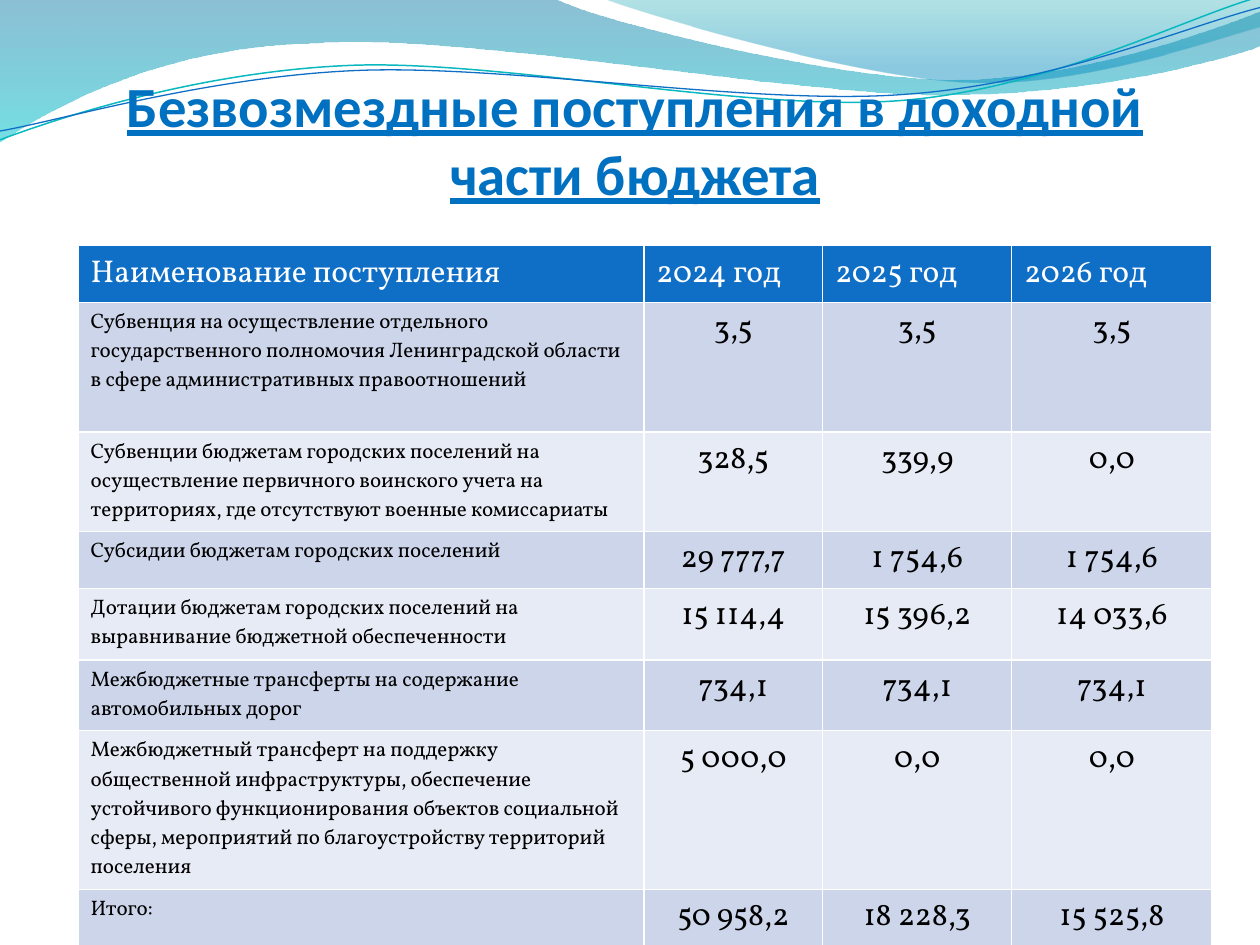
import pptx
import pptx.util
import pptx.dml.color
import pptx.enum.text
import pptx.oxml
import pptx.oxml.ns
import lxml.etree

Inches = pptx.util.Inches
Pt = pptx.util.Pt
qn = pptx.oxml.ns.qn
ALIGN = pptx.enum.text.PP_ALIGN
ANCHOR = pptx.enum.text.MSO_ANCHOR

TITLE = "Безвозмездные поступления в доходной части бюджета"
HEADER = ("Наименование поступления", "2024 год", "2025 год", "2026 год")
ROWS = [
    ("Субвенция на осуществление отдельного государственного полномочия "
     "Ленинградской области в сфере административных правоотношений", "3,5", "3,5", "3,5"),
    ("Субвенции бюджетам городских поселений на осуществление первичного воинского учета "
     "на территориях, где отсутствуют военные комиссариаты", "328,5", "339,9", "0,0"),
    ("Субсидии бюджетам городских поселений", "29 777,7", "1 754,6", "1 754,6"),
    ("Дотации бюджетам городских поселений на выравнивание бюджетной обеспеченности",
     "15 114,4", "15 396,2", "14 033,6"),
    ("Межбюджетные трансферты на содержание автомобильных дорог", "734,1", "734,1", "734,1"),
    ("Межбюджетный трансферт на поддержку общественной инфраструктуры, обеспечение "
     "устойчивого функционирования объектов социальной сферы, мероприятий по "
     "благоустройству территорий поселения", "5 000,0", "0,0", "0,0"),
    ("Итого:", "50 958,2", "18 228,3", "15 525,8"),
]
COLUMN_WIDTHS = (4.49, 1.42, 1.5, 1.59)
ROW_HEIGHTS = (0.45, 1.03, 0.79, 0.45, 0.57, 0.56, 1.26, 0.45)
HEADER_FILL = "0F6FC6"
BAND_FILLS = ("CCD5EA", "E7EBF5")

WAVES = [
    {"outline": [(0, 0), (4.4, -0.01),
                 (4.76, 0.17, 6.64, 0.63, 7.58, 0.63), (8.53, 0.63, 9.58, 0.26, 10, 0.09),
                 (10.01, 0.36),
                 (9.83, 0.44, 8.7, 0.76, 7.46, 0.75), (6.22, 0.75, 3.82, 0.28, 2.57, 0.34),
                 (1.29, 0.36, 0.46, 0.83, -0.01, 1.13)],
     "stops": [(0, "0074A1", 45), (100, "00C6CF", 55)]},
    {"outline": [(4.79, -0.01), (5.09, 0.11, 6.82, 0.62, 7.69, 0.65),
                 (8.56, 0.69, 9.61, 0.32, 10, 0.21), (10, 0)],
     "stops": [(0, "00A1A9", 30), (80, "008BBF", 45)]},
    {"outline": [(0, 1.11), (0.48, 0.93, 1.58, 0.57, 2.77, 0.52),
                 (3.95, 0.47, 5.93, 0.89, 7.13, 0.8), (8.33, 0.71, 9.38, 0.15, 9.98, -0.02)],
     "line": ("0AB8BF", 0.85)},
    {"outline": [(0, 1.04), (0.47, 0.96, 1.64, 0.61, 2.83, 0.56),
                 (4.03, 0.51, 5.97, 0.84, 7.17, 0.75), (8.36, 0.67, 9.41, 0.21, 10, 0.06)],
     "line": ("0F6FC6", 0.75)},
]


def color(value):
    return pptx.dml.color.RGBColor.from_string(value)


def bend_segments(shape, outline):
    segments = list(shape._element.iter(qn("a:lnTo")))
    for segment, part in zip(segments, outline[1:]):
        if len(part) == 2:
            continue
        curve = lxml.etree.Element(qn("a:cubicBezTo"))
        for x, y in zip(part[::2], part[1::2]):
            lxml.etree.SubElement(curve, qn("a:pt"), x=str(Inches(x) - shape.left),
                                  y=str(Inches(y) - shape.top))
        segment.getparent().replace(segment, curve)


def add_wave(page, wave):
    outline = wave["outline"]
    points = [(Inches(part[-2]), Inches(part[-1])) for part in outline]
    builder = page.shapes.build_freeform(*points[0])
    builder.add_line_segments(points[1:], close=False)
    shape = builder.convert_to_shape()
    bend_segments(shape, outline)
    shape.shadow.inherit = False
    if "stops" in wave:
        outline_element = next(shape._element.iter(qn("a:path")))
        lxml.etree.SubElement(outline_element, qn("a:close"))
        fill_gradient(shape, wave["stops"])
        shape.line.fill.background()
    else:
        line_color, width = wave["line"]
        shape.fill.background()
        shape.line.color.rgb = color(line_color)
        shape.line.width = Pt(width)


def fill_gradient(shape, stops):
    shape.fill.gradient()
    shape.fill.gradient_angle = 270
    for stop, (position, value, _) in zip(shape.fill.gradient_stops, stops):
        stop.position = position / 100
        stop.color.rgb = color(value)
    gradient = shape._element.spPr.find(qn("a:gradFill"))
    for tint, (_, _, opacity) in zip(gradient.iter(qn("a:srgbClr")), stops):
        lxml.etree.SubElement(tint, qn("a:alpha"), val=str(opacity * 1000))


def add_span(para, text, font, size, value, bold=False, underline=False):
    span = para.add_run()
    span.text = text
    span.font.name = font
    span.font.size = Pt(size)
    span.font.color.rgb = color(value)
    span.font.bold = bold
    span.font.underline = underline


def add_title(page):
    box = page.shapes.add_textbox(Inches(0.5), Inches(0.55), Inches(9.08), Inches(1.09))
    frame = box.text_frame
    frame.word_wrap = True
    frame.vertical_anchor = ANCHOR.BOTTOM
    frame.margin_left = frame.margin_right = frame.margin_bottom = 0
    frame.margin_top = Inches(0.05)
    para = frame.paragraphs[0]
    para.alignment = ALIGN.CENTER
    add_span(para, TITLE, "Calibri", 32.4, "0070C0", bold=True, underline=True)


def add_borders(cell, value, width):
    properties = cell._tc.get_or_add_tcPr()
    for side in ("lnL", "lnR", "lnT", "lnB"):
        border = lxml.etree.SubElement(properties, qn(f"a:{side}"), w=str(Pt(width)))
        fill = lxml.etree.SubElement(border, qn("a:solidFill"))
        lxml.etree.SubElement(fill, qn("a:srgbClr"), val=value)


def add_income_table(page):
    frame = page.shapes.add_table(len(ROW_HEIGHTS), len(COLUMN_WIDTHS), Inches(0.62), Inches(1.95),
                                  Inches(sum(COLUMN_WIDTHS)), Inches(sum(ROW_HEIGHTS)))
    table = frame.table
    table.first_row = table.horz_banding = False
    for column, width in zip(table.columns, COLUMN_WIDTHS):
        column.width = Inches(width)
    for row, height in zip(table.rows, ROW_HEIGHTS):
        row.height = Inches(height)
    for row_index, values in enumerate([HEADER] + ROWS):
        is_header = row_index == 0
        for column_index, text in enumerate(values):
            is_name = column_index == 0
            cell = table.cell(row_index, column_index)
            add_borders(cell, "FFFFFF", 1)
            cell.fill.solid()
            cell.fill.fore_color.rgb = color(
                HEADER_FILL if is_header else BAND_FILLS[(row_index - 1) % 2])
            para = cell.text_frame.paragraphs[0]
            para.alignment = ALIGN.LEFT if is_header or is_name else ALIGN.CENTER
            add_span(para, text, "Vollkorn", 12 if is_name and not is_header else 18,
                     "FFFFFF" if is_header else "000000")


def main():
    deck = pptx.Presentation()
    deck.slide_width = Inches(10)
    deck.slide_height = Inches(7.5)
    page = deck.slides.add_slide(deck.slide_layouts[6])
    for wave in WAVES:
        add_wave(page, wave)
    add_title(page)
    add_income_table(page)
    deck.save("out.pptx")


if __name__ == "__main__":
    main()
